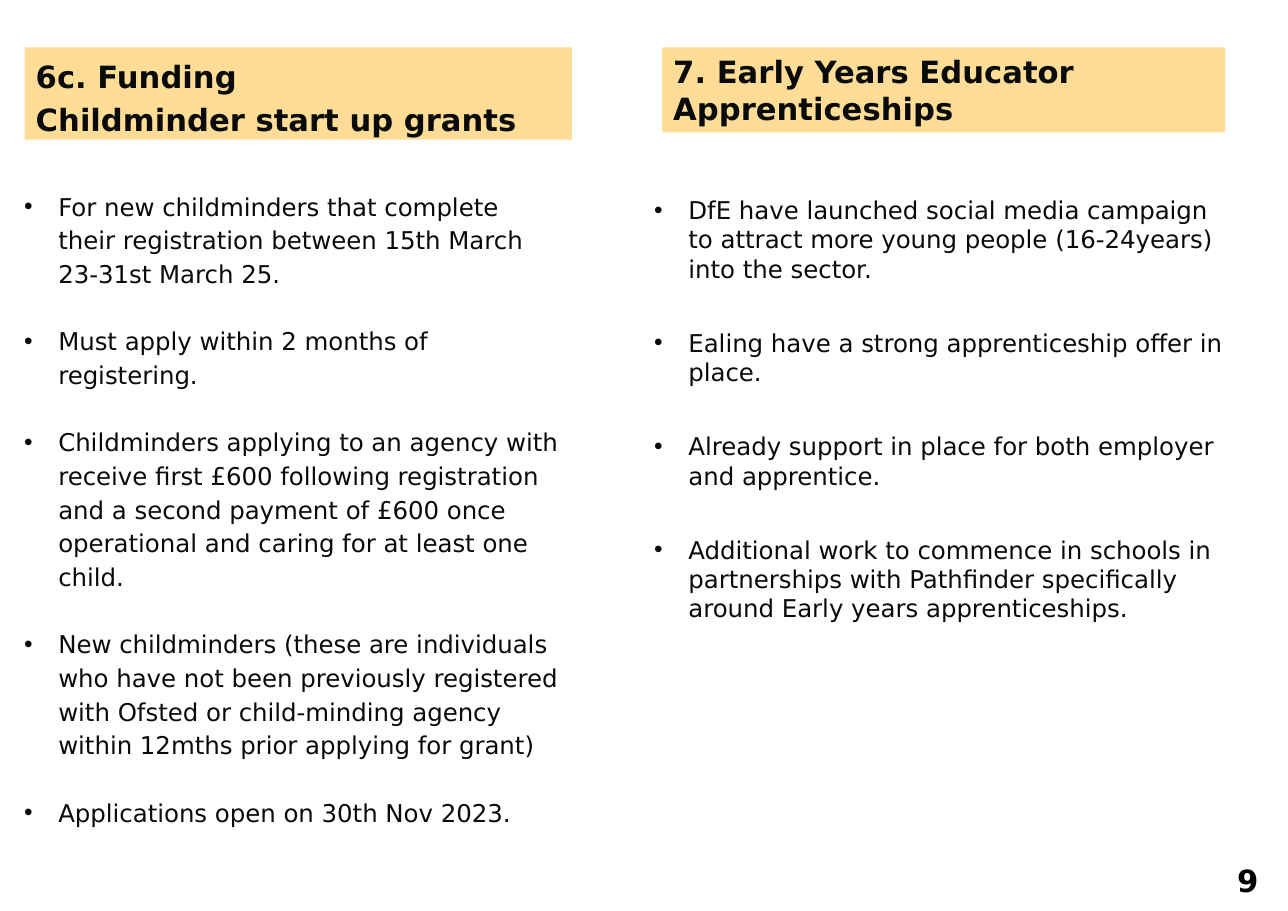
"""Build the slide on childminder grants and early years apprenticeships."""
from pptx import Presentation
from pptx.dml.color import RGBColor
from pptx.enum.text import MSO_ANCHOR, MSO_AUTO_SIZE, PP_ALIGN
from pptx.util import Cm, Pt

TOP, NO_FIT = MSO_ANCHOR.TOP, MSO_AUTO_SIZE.NONE
LEFT, CENTER = PP_ALIGN.LEFT, PP_ALIGN.CENTER
FONT, INK, BLACK, SAND = "DejaVu Sans", "090B0B", "000000", "FFDD97"
INDENT = Cm(0.79)

GRANTS_TITLE = ["6c. Funding", "Childminder start up grants"]
GRANTS = [
    "For new childminders that complete their registration between 15th March 23-31st March 25.",
    "Must apply within 2 months of registering.",
    "Childminders applying to an agency with receive first £600 following registration "
    "and a second payment of £600 once operational and caring for at least one child.",
    "New childminders (these are individuals who have not been previously registered "
    "with Ofsted or child-minding agency within 12mths prior applying for grant)",
    "Applications open on 30th Nov 2023.",
]
APPRENTICE_TITLE = ["7. Early Years Educator Apprenticeships"]
APPRENTICE = [
    "DfE have launched social media campaign to attract more young people (16-24years) "
    "into the sector.",
    "Ealing have a strong apprenticeship offer in place.",
    "Already support in place for both employer and apprentice.",
    "Additional work to commence in schools in partnerships with Pathfinder specifically "
    "around Early years apprenticeships.",
]
# placeholder index, (left, top, width, height) in cm, lines, line spacing
HEADINGS = [
    (0, (0.57, 1.09, 12.62, 2.13), GRANTS_TITLE, 1.15),
    (3, (15.27, 1.09, 12.98, 1.96), APPRENTICE_TITLE, 1.0),
]
# as above, then the gap after each item in points
LISTS = [
    (2, (0.3, 4.19, 12.9, 15.2), GRANTS, 1.15, 21.8),
    (4, (14.83, 4.37, 13.79, 11.2), APPRENTICE, 1.0, 29.2),
]
PAGE_NUMBER = ("9", (28.09, 19.74, 1.37, 1.12))


def color(hex_code):
    return RGBColor.from_string(hex_code)


def place(sp, box):
    sp.left, sp.top, sp.width, sp.height = (Cm(v) for v in box)


def write(sp, lines, size, spacing=1.0, gap=0, bold=False, align=LEFT, ink=INK):
    tf = sp.text_frame
    tf.text = "\n".join(lines)
    tf.word_wrap, tf.auto_size, tf.vertical_anchor = True, NO_FIT, TOP
    for p in tf.paragraphs:
        p.alignment, p.line_spacing = align, spacing
        p.space_before, p.space_after = Pt(0), Pt(gap)
        for r in p.runs:
            r.font.name, r.font.size, r.font.bold = FONT, Pt(size), bold
            r.font.color.rgb = color(ink)


def main():
    prs = Presentation()
    prs.slide_width, prs.slide_height = Cm(29.7), Cm(21)
    slide = prs.slides.add_slide(prs.slide_layouts.get_by_name("Comparison"))
    holders = {sp.placeholder_format.idx: sp for sp in slide.placeholders}

    for idx, box, lines, spacing in HEADINGS:
        sp = holders.pop(idx)
        place(sp, box)
        sp.fill.solid()
        sp.fill.fore_color.rgb = color(SAND)
        write(sp, lines, 20, spacing, bold=True)

    for idx, box, items, spacing, gap in LISTS:
        sp = holders.pop(idx)
        place(sp, box)
        write(sp, items, 16, spacing, gap)
        for p in sp.text_frame.paragraphs:
            pPr = p._p.get_or_add_pPr()
            pPr.set("marL", str(INDENT))
            pPr.set("indent", str(-INDENT))

    for sp in holders.values():
        sp.element.getparent().remove(sp.element)

    number, box = PAGE_NUMBER
    sp = slide.shapes.add_textbox(*(Cm(v) for v in box))
    write(sp, [number], 20, bold=True, align=CENTER, ink=BLACK)
    prs.save("out.pptx")


if __name__ == "__main__":
    main()
